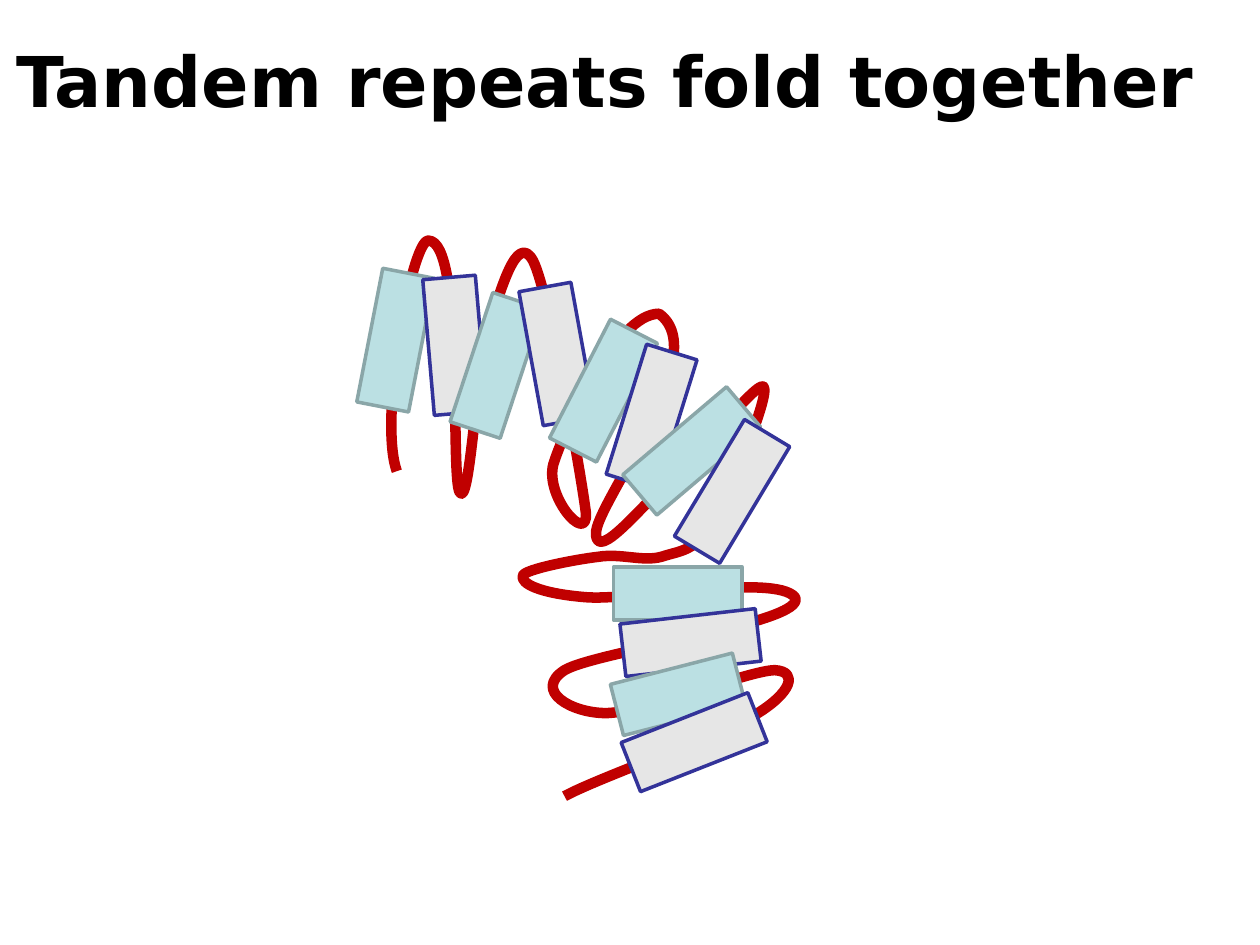
from dataclasses import dataclass, field
from itertools import chain

from pptx import Presentation
from pptx.dml.color import RGBColor
from pptx.enum.shapes import MSO_SHAPE as Preset
from pptx.enum.text import MSO_AUTO_SIZE as AutoSize, PP_ALIGN as Align
from pptx.oxml.ns import qn
from pptx.oxml.xmlchemy import OxmlElement
from pptx.shapes.autoshape import Shape
from pptx.shapes.shapetree import GroupShapes, SlideShapes
from pptx.util import Pt

Point = tuple[float, float]


@dataclass(frozen=True)
class HelixStyle:
    fill: str
    edge: str


@dataclass(frozen=True)
class Theme:
    first_helix: HelixStyle = HelixStyle("BBE0E3", "8AA6A8")
    second_helix: HelixStyle = HelixStyle("E6E6E6", "333399")
    chain_color: str = "C00000"
    chain_weight: float = 6
    helix_weight: float = 2
    helix_height: float = 30.2
    title_font: dict = field(default_factory=lambda: {
        "name": "DejaVu Sans", "size": Pt(40), "bold": True})
    title_color: str = "000000"


@dataclass(frozen=True)
class Helix:
    left: float
    top: float
    rotation: float
    width: float = 77.8


@dataclass(frozen=True)
class Repeat:
    first: Helix
    second: Helix
    grouped: bool = True


THEME = Theme()

REPEATS = [
    Repeat(Helix(187.2, 179.3, 281), Helix(221, 182.2, 85.1)),
    Repeat(Helix(244.8, 193.7, 288.3), Helix(279.4, 187.2, 79.7)),
    Repeat(Helix(306.7, 208.1, 297.2, 76.3), Helix(333.4, 223.2, 107.3)),
    Repeat(Helix(356.4, 242.6, 319.7), Helix(379.4, 265.7, 121)),
    Repeat(Helix(350.6, 324, 0, 73.4), Helix(355.7, 352.1, 353.5), grouped=False),
    Repeat(Helix(351.4, 381.6, 345.6, 72), Helix(357.8, 409, 338.5)),
]

CHAIN_START: Point = (226.8, 269.3)
CHAIN_CURVES: list[tuple[Point, Point, Point]] = [
    ((216, 239.8), (235.4, 136.8), (244.8, 137.5)),
    ((265.7, 137.5), (257, 272.9), (262.8, 281.5)),
    ((268.6, 290.2), (272.2, 211), (278.6, 189.4)),
    ((285.8, 167), (295.2, 131.8), (304.6, 149)),
    ((313.9, 167), (332.6, 274.3), (334.8, 293)),
    ((336.2, 312.5), (309.6, 282.2), (316.8, 263.5)),
    ((323.3, 244.1), (352.1, 179.3), (376.6, 179.3)),
    ((409, 202.3), (339.1, 289.4), (340.6, 305.3)),
    ((341.3, 321.1), (366.5, 289.4), (382.3, 275)),
    ((398.2, 261.4), (432.7, 217.4), (436.3, 221)),
    ((440.6, 225.4), (416.2, 283), (406.8, 299.5)),
    ((396.7, 315.4), (388.8, 314.6), (378, 318.2)),
    ((367.2, 321.1), (355, 316.1), (342, 318.2)),
    ((329, 319.7), (299.5, 325.4), (298.8, 329)),
    ((297.4, 333.4), (308.2, 339.1), (334.8, 341.3)),
    ((360.7, 343.4), (442.8, 327.6), (454.3, 341.3)),
    ((462.2, 355.7), (340.6, 372.2), (322.6, 383)),
    ((304.6, 394.6), (326.2, 407.5), (346.3, 407.5)),
    ((366.5, 407.5), (428.4, 383), (442.8, 383)),
    ((456.5, 383.8), (452.2, 396), (432, 408.2)),
    ((411.8, 419.8), (340.6, 445), (322.6, 455)),
]


def set_line(shape: Shape, color: str, weight: float) -> None:
    """Give a shape a solid outline and no shadow."""
    shape.shadow.inherit = False
    shape.line.color.rgb = RGBColor.from_string(color)
    shape.line.width = Pt(weight)


def draw_chain(shapes: SlideShapes) -> None:
    """Draw the backbone, turning each three straight segments into one Bézier."""
    builder = shapes.build_freeform(*map(Pt, CHAIN_START))
    controls = [(Pt(x), Pt(y)) for x, y in chain.from_iterable(CHAIN_CURVES)]
    builder.add_line_segments(controls, close=False)
    backbone = builder.convert_to_shape()
    backbone.fill.background()
    set_line(backbone, THEME.chain_color, THEME.chain_weight)
    segments = list(backbone._element.iter(qn("a:lnTo")))
    for start in range(0, len(segments), 3):
        bezier = OxmlElement("a:cubicBezTo")
        segments[start].addprevious(bezier)
        for segment in segments[start:start + 3]:
            bezier.append(segment[0])
            segment.getparent().remove(segment)


def draw_helix(shapes: SlideShapes | GroupShapes, helix: Helix, style: HelixStyle) -> None:
    """Draw one helix as a rotated rectangle."""
    box = map(Pt, (helix.left, helix.top, helix.width, THEME.helix_height))
    cylinder = shapes.add_shape(Preset.RECTANGLE, *box)
    cylinder.rotation = helix.rotation
    cylinder.fill.solid()
    cylinder.fill.fore_color.rgb = RGBColor.from_string(style.fill)
    set_line(cylinder, style.edge, THEME.helix_weight)


def draw_repeat(shapes: SlideShapes, repeat: Repeat) -> None:
    """Draw the two helices of a repeat."""
    target = shapes.add_group_shape().shapes if repeat.grouped else shapes
    draw_helix(target, repeat.first, THEME.first_helix)
    draw_helix(target, repeat.second, THEME.second_helix)


def draw_title(shapes: SlideShapes, wording: str) -> None:
    """Write the centred slide title."""
    frame = shapes.add_textbox(*map(Pt, (0, 18, 691.2, 55.4))).text_frame
    frame.word_wrap = False
    frame.auto_size = AutoSize.SHAPE_TO_FIT_TEXT
    heading = frame.paragraphs[0]
    heading.alignment = Align.CENTER
    words = heading.add_run()
    words.text = wording
    for name, value in THEME.title_font.items():
        setattr(words.font, name, value)
    words.font.color.rgb = RGBColor.from_string(THEME.title_color)


def main() -> None:
    """Build the slide and save it."""
    deck = Presentation()
    deck.slide_width, deck.slide_height = Pt(720), Pt(540)
    shapes = deck.slides.add_slide(deck.slide_layouts[6]).shapes
    draw_chain(shapes)
    draw_title(shapes, "Tandem repeats fold together")
    for repeat in REPEATS:
        draw_repeat(shapes, repeat)
    deck.save("out.pptx")


if __name__ == "__main__":
    main()
